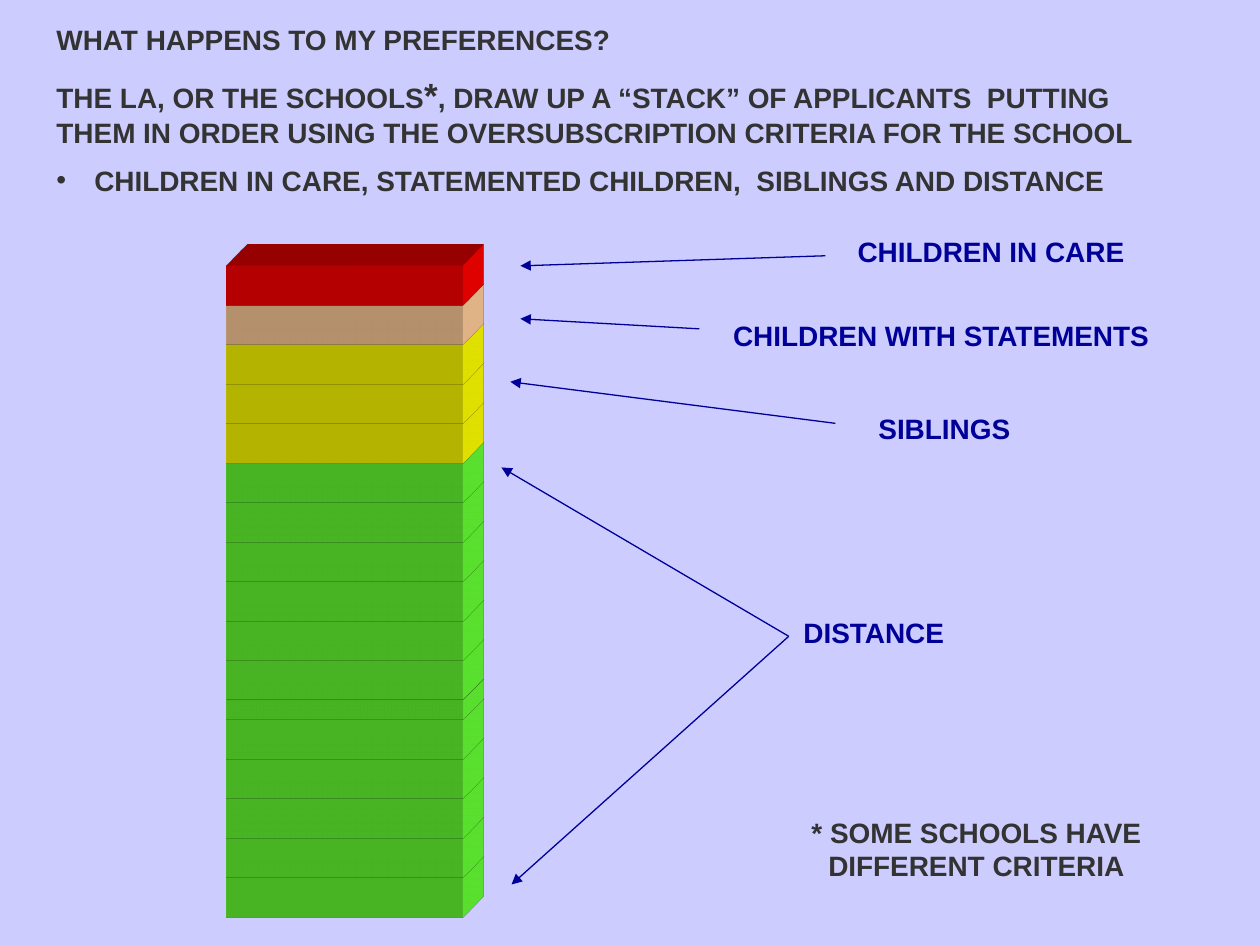
from lxml import etree
from pptx import Presentation
from pptx.dml.color import RGBColor
from pptx.enum.shapes import MSO_CONNECTOR, MSO_SHAPE
from pptx.enum.text import PP_ALIGN
from pptx.oxml.ns import qn
from pptx.util import Inches, Pt

STRAIGHT = MSO_CONNECTOR.STRAIGHT
RECTANGLE = MSO_SHAPE.RECTANGLE
CENTER = PP_ALIGN.CENTER

FONT = "Arial"
BACKGROUND, DARK, NAVY = "CCCCFF", "333333", "000099"
RED, TAN, YELLOW, GREEN = "FF0000", "FFCC99", "FFFF00", "66FF33"

# Blocks from bottom to top: colour and relative height.
BLOCKS = ([(GREEN, 1)] * 5 + [(GREEN, 0.5)] + [(GREEN, 1)] * 6
          + [(YELLOW, 1)] * 3 + [(TAN, 1), (RED, 1)])

# Label, its box, and the start and end of each of its arrows.
CRITERIA = [
    ("CHILDREN IN CARE", (6.67, 1.81, 2.39, 0.37), [(6.55, 2.03, 4.13, 2.11)]),
    ("CHILDREN WITH STATEMENTS", (5.7, 2.48, 3.54, 0.37), [(5.55, 2.61, 4.13, 2.53)]),
    ("SIBLINGS", (6.87, 3.22, 1.25, 0.37), [(6.63, 3.36, 4.05, 3.03)]),
    ("DISTANCE", (6.27, 4.84, 1.33, 0.37),
     [(6.26, 5.05, 3.98, 3.71), (6.26, 5.05, 4.06, 7.02)]),
]


def color(value):
    return RGBColor.from_string(value)


def add_arrow(page, start, end):
    connector = page.shapes.add_connector(STRAIGHT, *map(Inches, start + end))
    connector.line.color.rgb = color(NAVY)
    connector.line.width = Pt(0.75)
    outline = connector.line._get_or_add_ln()
    etree.SubElement(outline, qn("a:tailEnd"), type="triangle")
    etree.SubElement(connector._element.spPr, qn("a:effectLst"))


def add_text_frame(page, box, wrap=True):
    frame = page.shapes.add_textbox(*map(Inches, box)).text_frame
    frame.word_wrap = wrap
    return frame


def add_span(para, text, ink, size=16):
    span = para.add_run()
    span.text = text
    span.font.name = FONT
    span.font.size = Pt(size)
    span.font.bold = True
    span.font.color.rgb = color(ink)


def set_bullet(para, indent):
    properties = para._p.get_or_add_pPr()
    properties.set("marL", str(Inches(indent)))
    properties.set("indent", str(-Inches(indent)))
    etree.SubElement(properties, qn("a:buFont"), typeface=FONT)
    etree.SubElement(properties, qn("a:buChar"), char="•")


def add_heading(page, box):
    frame = add_text_frame(page, box)
    title = frame.paragraphs[0]
    add_span(title, "WHAT HAPPENS TO MY PREFERENCES?", DARK)

    rule = frame.add_paragraph()
    rule.space_before = Pt(10)
    add_span(rule, "THE LA, OR THE SCHOOLS", DARK)
    add_span(rule, "*", DARK, 20)
    add_span(rule, ", DRAW UP A “STACK” OF APPLICANTS  PUTTING THEM IN ORDER "
                   "USING THE OVERSUBSCRIPTION CRITERIA FOR THE SCHOOL", DARK)

    order = frame.add_paragraph()
    order.space_before = Pt(8)
    set_bullet(order, 0.3)
    add_span(order, "CHILDREN IN CARE, STATEMENTED CHILDREN,  SIBLINGS AND DISTANCE", DARK)


def extrude(shape, fill, depth):
    """Give the shape a solid body that recedes to the top right."""
    properties = shape._element.spPr
    scene = etree.SubElement(properties, qn("a:scene3d"))
    etree.SubElement(scene, qn("a:camera"), prst="legacyObliqueTopRight")
    etree.SubElement(scene, qn("a:lightRig"), rig="legacyFlat3", dir="b")
    body = etree.SubElement(properties, qn("a:sp3d"), extrusionH=str(Inches(depth)),
                            prstMaterial="legacyMatte")
    for bevel in ("a:bevelT", "a:bevelB"):
        etree.SubElement(body, qn(bevel), w="13500", h="13500", prst="angle")
    extrusion = etree.SubElement(body, qn("a:extrusionClr"))
    etree.SubElement(extrusion, qn("a:srgbClr"), val=fill)


def add_stack(page, box, depth):
    left, top, width, height = box
    unit = height / sum(share for _, share in BLOCKS)
    y = top + height
    for fill, share in BLOCKS:
        y -= share * unit
        block = page.shapes.add_shape(
            RECTANGLE, *map(Inches, (left, y, width, share * unit)))
        block.shadow.inherit = False
        block.fill.solid()
        block.fill.fore_color.rgb = color(fill)
        block.line.fill.background()
        extrude(block, fill, depth)


def add_criterion(page, text, box, arrows):
    for arrow in arrows:
        add_arrow(page, arrow[:2], arrow[2:])
    para = add_text_frame(page, box, wrap=False).paragraphs[0]
    para.alignment = CENTER
    add_span(para, text, NAVY)


def add_footnote(page, box):
    para = add_text_frame(page, box).paragraphs[0]
    para.alignment = CENTER
    add_span(para, "* SOME SCHOOLS HAVE DIFFERENT CRITERIA", DARK)


def main():
    deck = Presentation()
    deck.slide_width, deck.slide_height = Inches(10), Inches(7.5)
    page = deck.slides.add_slide(deck.slide_layouts[6])
    page.background.fill.solid()
    page.background.fill.fore_color.rgb = color(BACKGROUND)

    add_heading(page, (0.35, 0.13, 9.13, 1.54))
    add_stack(page, (1.8, 2.11, 1.87, 5.17), depth=0.47)
    for text, box, arrows in CRITERIA:
        add_criterion(page, text, box, arrows)
    add_footnote(page, (6.02, 6.42, 3.46, 0.64))
    deck.save("out.pptx")


if __name__ == "__main__":
    main()
